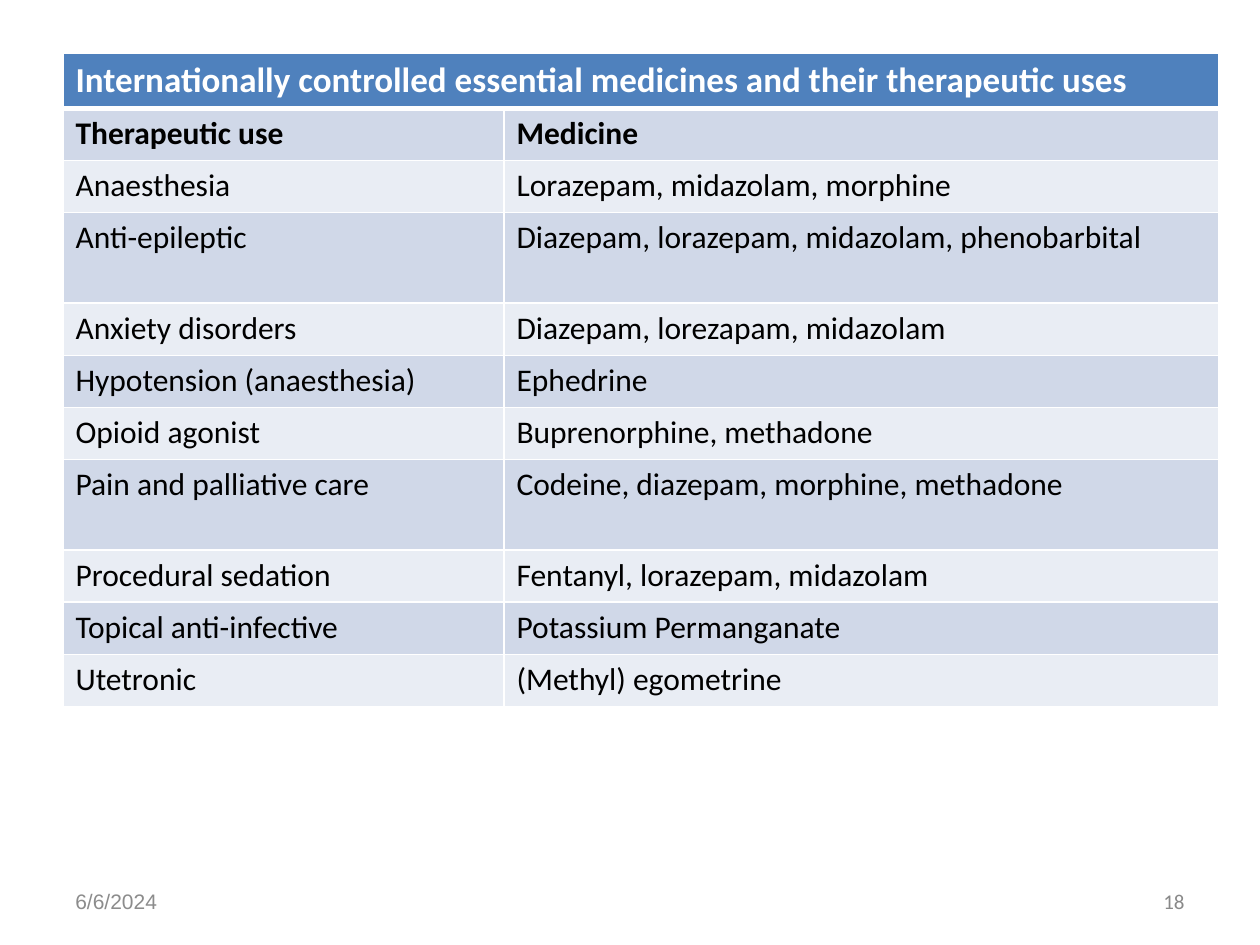
from dataclasses import dataclass

from lxml.etree import SubElement
from pptx import Presentation
from pptx.dml.color import RGBColor
from pptx.enum.text import MSO_ANCHOR, PP_ALIGN
from pptx.oxml.ns import qn
from pptx.util import Inches, Pt


@dataclass(frozen=True)
class Theme:
    font: str = "Calibri"
    date_font: str = "Arial"
    header_fill: str = "4F81BD"
    bands: tuple = ("D0D8E8", "E9EDF4")
    white: str = "FFFFFF"
    black: str = "000000"
    date_color: str = "8C8C8C"
    number_color: str = "898989"
    heading_size: int = 20
    body_size: int = 18
    footer_size: int = 12


THEME = Theme()

HEADING = "Internationally controlled essential medicines and their therapeutic uses"
MEDICINES = [
    ("Therapeutic use", "Medicine"),
    ("Anaesthesia", "Lorazepam, midazolam, morphine"),
    ("Anti-epileptic", "Diazepam, lorazepam, midazolam, phenobarbital"),
    ("Anxiety disorders", "Diazepam, lorezapam, midazolam"),
    ("Hypotension (anaesthesia)", "Ephedrine"),
    ("Opioid agonist", "Buprenorphine, methadone"),
    ("Pain and palliative care", "Codeine, diazepam, morphine, methadone"),
    ("Procedural sedation", "Fentanyl, lorazepam, midazolam"),
    ("Topical anti-infective", "Potassium Permanganate"),
    ("Utetronic", "(Methyl) egometrine"),
]
TALL_USES = {"Anti-epileptic", "Pain and palliative care"}
TABLE_HEIGHT, HEADING_HEIGHT, TALL_HEIGHT = 5.19, 0.44, 0.72
COLUMN_WIDTHS = (3.5, 5.67)


def format_font(font, color, **values):
    for name, value in values.items():
        setattr(font, name, value)
    font.color.rgb = RGBColor.from_string(color)


def set_borders(cell, bottom=1):
    """Draw white cell borders; they must precede the fill in the cell XML."""
    properties = cell._tc.get_or_add_tcPr()
    for side, width in {"lnL": 1, "lnR": 1, "lnT": 1, "lnB": bottom}.items():
        line = SubElement(properties, qn(f"a:{side}"), w=str(Pt(width)))
        fill = SubElement(line, qn("a:solidFill"))
        SubElement(fill, qn("a:srgbClr"), val=THEME.white)


def fill_cell(cell, text, fill, color, size, bold=False, bottom=1):
    set_borders(cell, bottom)
    cell.fill.solid()
    cell.fill.fore_color.rgb = RGBColor.from_string(fill)
    paragraph = cell.text_frame.paragraphs[0]
    run = paragraph.add_run()
    run.text = text
    format_font(run.font, color, name=THEME.font, size=Pt(size), bold=bold)


def add_medicine_table(slide):
    shape = slide.shapes.add_table(
        len(MEDICINES) + 1, len(COLUMN_WIDTHS), Inches(0.5), Inches(0.42),
        Inches(sum(COLUMN_WIDTHS)), Inches(TABLE_HEIGHT))
    table = shape.table
    for column, width in zip(table.columns, COLUMN_WIDTHS):
        column.width = Inches(width)

    # Heading across both columns
    table.rows[0].height = Inches(HEADING_HEIGHT)
    table.cell(0, 0).merge(table.cell(0, 1))
    fill_cell(table.cell(0, 0), HEADING, THEME.header_fill, THEME.white,
              THEME.heading_size, bold=True, bottom=3)
    set_borders(table.cell(0, 1), bottom=3)

    # Banded rows share the height left by the heading and the tall rows
    tall_count = len(TALL_USES)
    plain_height = ((TABLE_HEIGHT - HEADING_HEIGHT - tall_count * TALL_HEIGHT)
                    / (len(MEDICINES) - tall_count))
    for index, entry in enumerate(MEDICINES):
        height = TALL_HEIGHT if entry[0] in TALL_USES else plain_height
        table.rows[index + 1].height = Inches(height)
        for column, text in enumerate(entry):
            fill_cell(table.cell(index + 1, column), text, THEME.bands[index % 2],
                      THEME.black, THEME.body_size, bold=index == 0)


def add_footer(slide, left, text, font, color, alignment):
    box = slide.shapes.add_textbox(Inches(left), Inches(6.95), Inches(2.33), Inches(0.4))
    frame = box.text_frame
    frame.word_wrap = True
    frame.vertical_anchor = MSO_ANCHOR.MIDDLE
    paragraph = frame.paragraphs[0]
    paragraph.alignment = alignment
    run = paragraph.add_run()
    run.text = text
    format_font(run.font, color, name=font, size=Pt(THEME.footer_size))


def main():
    presentation = Presentation()
    presentation.slide_width = Inches(10)
    presentation.slide_height = Inches(7.5)
    slide = presentation.slides.add_slide(presentation.slide_layouts[6])

    # Date and slide number
    add_footer(slide, 0.5, "6/6/2024", THEME.date_font, THEME.date_color, PP_ALIGN.LEFT)
    add_footer(slide, 7.17, "18", THEME.font, THEME.number_color, PP_ALIGN.RIGHT)

    # Medicines by therapeutic use
    add_medicine_table(slide)
    presentation.save("out.pptx")


if __name__ == "__main__":
    main()
